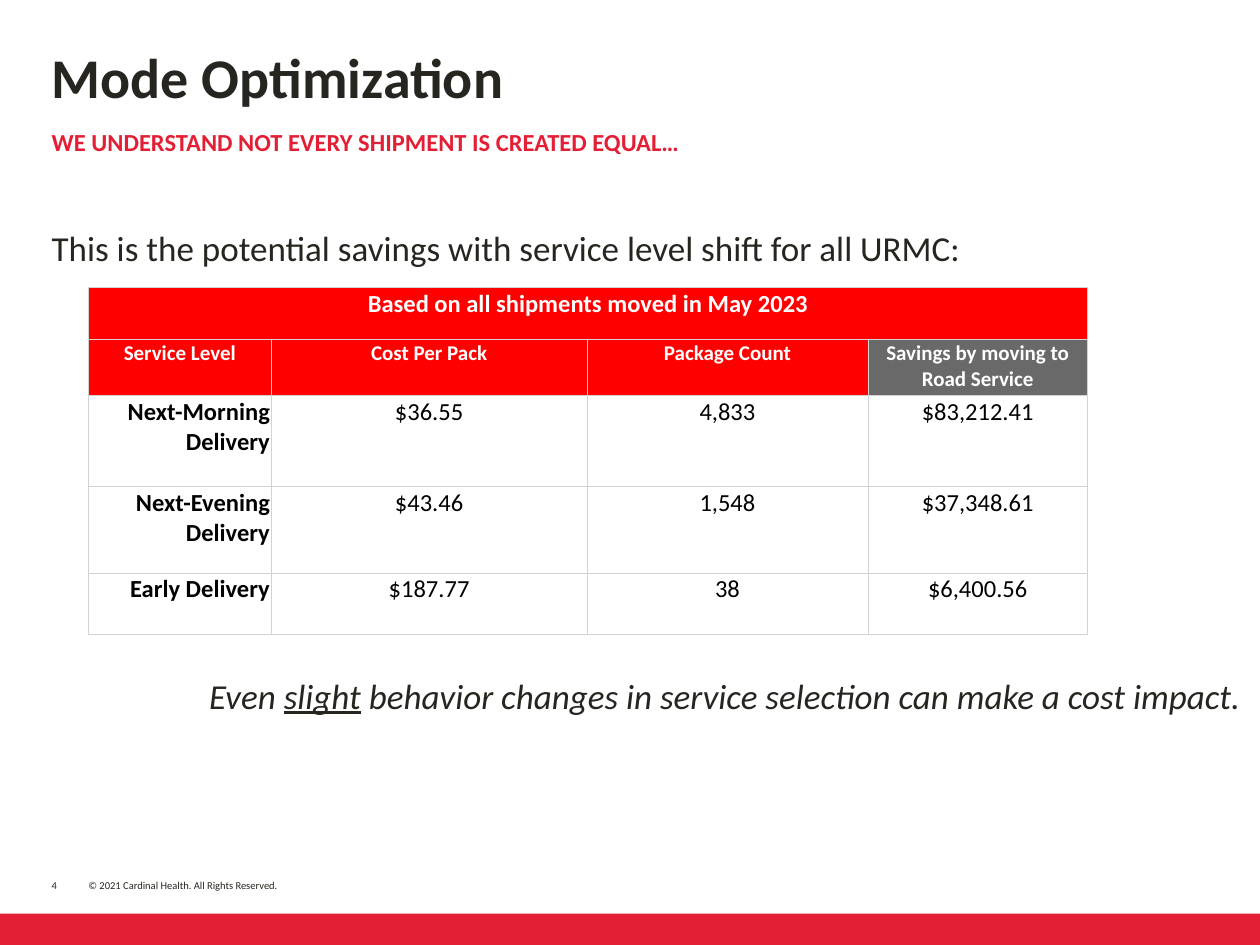
"""Build the mode optimization slide with its savings table."""
from dataclasses import dataclass

from lxml import etree
from pptx import Presentation
from pptx import util as u
from pptx.dml.color import RGBColor
from pptx.enum import shapes, text
from pptx.oxml import ns

Pt = u.Pt
Align = text.PP_ALIGN
Anchor = text.MSO_ANCHOR


@dataclass(frozen=True)
class Theme:
    """Hold the colours, font and type sizes of the slide."""
    font: str = "Calibri"
    ink: str = "27251F"
    brand: str = "E41F35"
    head: str = "FF0000"
    gray: str = "696969"
    rule: str = "D3D3D3"
    white: str = "FFFFFF"
    black: str = "000000"
    title: int = 32
    body: int = 20
    label: int = 14
    small: int = 12
    foot: int = 6


THEME = Theme()
ROWS = [
    ("Next-Morning Delivery", "$36.55", "4,833", "$83,212.41"),
    ("Next-Evening Delivery", "$43.46", "1,548", "$37,348.61"),
    ("Early Delivery", "$187.77", "38", "$6,400.56"),
]
HEADS = ("Service Level", "Cost Per Pack", "Package Count",
         "Savings by moving to Road Service")
WIDTHS = (104.5, 180.5, 160.5, 125.5)
HEIGHTS = (29.5, 32.25, 52, 49.5, 35)


def add_run(para, words, size, color, bold=False, italic=False, under=False):
    """Add one styled run to a paragraph."""
    run = para.add_run()
    run.text = words
    font = run.font
    font.name, font.size = THEME.font, Pt(size)
    font.bold, font.italic, font.underline = bold, italic, under
    font.color.rgb = RGBColor.from_string(color)


def set_frame(frame, anchor=Anchor.TOP):
    """Clear the margins of a text frame and return its first paragraph."""
    frame.margin_left = frame.margin_right = 0
    frame.margin_top = frame.margin_bottom = 0
    frame.word_wrap = True
    frame.auto_size = text.MSO_AUTO_SIZE.NONE
    frame.vertical_anchor = anchor
    para = frame.paragraphs[0]
    para.alignment = Align.LEFT
    return para


def add_text(slide, box, anchor=Anchor.TOP):
    """Add a text box and return its first paragraph."""
    shape = slide.shapes.add_textbox(*map(Pt, box))
    return set_frame(shape.text_frame, anchor)


def add_title(slide, words):
    """Place and format the title placeholder."""
    title = slide.shapes.title
    title.left, title.top, title.width, title.height = map(Pt, (29.5, 31.7, 577.5, 26))
    para = set_frame(title.text_frame)
    para.line_spacing = 0.8
    add_run(para, words, THEME.title, THEME.ink, bold=True)


def add_band(slide):
    """Draw the coloured band along the bottom edge."""
    band = slide.shapes.add_shape(
        shapes.MSO_SHAPE.RECTANGLE, Pt(0), Pt(522), Pt(720), Pt(18))
    band.shadow.inherit = False
    band.fill.solid()
    band.fill.fore_color.rgb = RGBColor.from_string(THEME.brand)
    band.line.fill.background()


def set_edge(cell):
    """Draw a thin rule on all four sides of a cell."""
    props = cell._tc.get_or_add_tcPr()
    for spot, side in enumerate(("lnL", "lnR", "lnT", "lnB")):
        line = etree.Element(ns.qn(f"a:{side}"), w=str(Pt(0.5)))
        fill = etree.SubElement(line, ns.qn("a:solidFill"))
        etree.SubElement(fill, ns.qn("a:srgbClr"), val=THEME.rule)
        props.insert(spot, line)


def set_cell(cell, words, size, color, fill=None, bold=True, align=Align.CENTER):
    """Fill a table cell with a single styled run."""
    cell.margin_left = cell.margin_right = cell.margin_top = Pt(0.75)
    cell.margin_bottom = 0
    if fill:
        cell.fill.solid()
        cell.fill.fore_color.rgb = RGBColor.from_string(fill)
    else:
        cell.fill.background()
    set_edge(cell)
    para = cell.text_frame.paragraphs[0]
    para.alignment = align
    if words:
        add_run(para, words, size, color, bold)


def add_grid(slide):
    """Add the savings table."""
    grid = slide.shapes.add_table(
        len(HEIGHTS), len(WIDTHS), Pt(50.5), Pt(164.4),
        Pt(sum(WIDTHS)), Pt(sum(HEIGHTS))).table
    for col, width in zip(grid.columns, WIDTHS):
        col.width = Pt(width)
    for row, height in zip(grid.rows, HEIGHTS):
        row.height = Pt(height)
    grid.cell(0, 0).merge(grid.cell(0, len(WIDTHS) - 1))
    for col, head in enumerate(HEADS):
        words = "" if col else "Based on all shipments moved in May 2023"
        set_cell(grid.cell(0, col), words, THEME.label, THEME.white, THEME.head)
        fill = THEME.gray if head == HEADS[-1] else THEME.head
        set_cell(grid.cell(1, col), head, THEME.small, THEME.white, fill)
    for row, values in enumerate(ROWS, 2):
        for col, value in enumerate(values):
            set_cell(grid.cell(row, col), value, THEME.label, THEME.black,
                     bold=col == 0, align=Align.CENTER if col else Align.RIGHT)


def main():
    """Build and save the slide."""
    deck = Presentation()
    deck.slide_width, deck.slide_height = Pt(720), Pt(540)
    slide = deck.slides.add_slide(deck.slide_layouts[5])
    add_band(slide)
    add_title(slide, "Mode Optimization")
    add_run(add_text(slide, (29.5, 72.7, 577, 26)),
            "WE UNDERSTAND NOT EVERY SHIPMENT IS CREATED EQUAL…",
            THEME.label, THEME.brand, bold=True)
    add_run(add_text(slide, (29.5, 129.6, 641, 51)),
            "This is the potential savings with service level shift for all URMC:",
            THEME.body, THEME.ink)
    add_grid(slide)
    close = add_text(slide, (119.5, 385.2, 641, 51))
    for words, under in (
            ("Even ", False), ("slight", True),
            (" behavior changes in service selection can make a cost impact.", False)):
        add_run(close, words, THEME.body, THEME.ink, italic=True, under=under)
    for left, width, words in (
            (29.5, 12, "4"),
            (50.5, 453.5, "© 2021 Cardinal Health. All Rights Reserved.")):
        para = add_text(slide, (left, 499, width, 13.7), Anchor.MIDDLE)
        add_run(para, words, THEME.foot, THEME.ink)
    deck.save("out.pptx")


if __name__ == "__main__":
    main()
